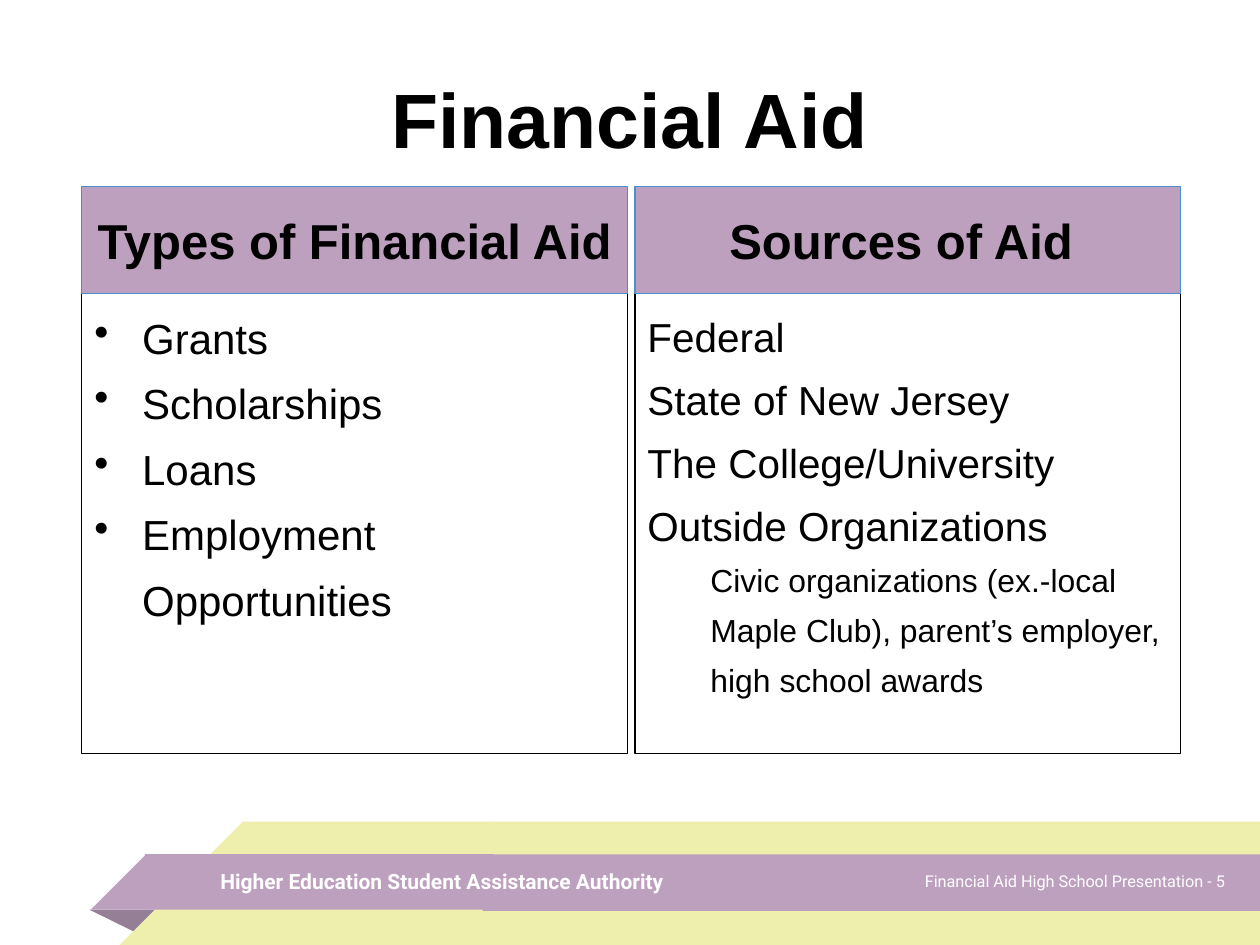
"""Build the Financial Aid slide: two headed panels above a ribbon footer."""
import pptx
import pptx.dml.color
import pptx.enum.shapes
import pptx.enum.text
import pptx.oxml.ns
import pptx.util
from lxml import etree

SHAPES = pptx.enum.shapes.MSO_SHAPE
ALIGN = pptx.enum.text.PP_ALIGN
ANCHOR = pptx.enum.text.MSO_ANCHOR
Inches = pptx.util.Inches

WIDTH, HEIGHT = 10, 7.5
BLACK, WHITE = "000000", "FFFFFF"
MAUVE, LIME, SHADE, BLUE = "BD9FBE", "EEEFAC", "957F97", "498FD2"

TITLE = "Financial Aid"
PANELS = [
    {
        "heading": "Types of Financial Aid",
        "size": 24,
        "bullet": True,
        "items": ["Grants", "Scholarships", "Loans", "Employment Opportunities"],
        "detail": [],
    },
    {
        "heading": "Sources of Aid ",
        "size": 23.1,
        "bullet": False,
        "items": ["Federal", "State of New Jersey", "The College/University",
                  "Outside Organizations"],
        "detail": ["Civic organizations (ex.-local Maple Club), parent’s employer, "
                   "high school awards"],
    },
]
DETAIL_SIZE = 18.2
LINE_SPACING = 1.3
PANEL_LEFT, PANEL_WIDTH, PANEL_GAP = 0.65, 4.33, 0.06
HEADING_TOP, HEADING_HEIGHT = 1.48, 0.85
BODY_TOP, BODY_HEIGHT = 2.31, 3.67

LIME_TOP, MAUVE_TOP, MAUVE_HEIGHT = 6.52, 6.78, 0.44
LIME_HEIGHT = HEIGHT - LIME_TOP
RIBBON = [
    (SHAPES.RECTANGLE, (3.88, LIME_TOP, WIDTH - 3.88, LIME_HEIGHT), LIME),
    (SHAPES.ISOSCELES_TRIANGLE, (0.71, 7.22, 0.57, 0.19), SHADE),
    (SHAPES.RECTANGLE, (1.92, LIME_TOP, 2, LIME_HEIGHT), LIME),
    (SHAPES.RIGHT_TRIANGLE, (0.95, LIME_TOP, 0.98, LIME_HEIGHT), LIME),
    (SHAPES.RECTANGLE, (1.15, MAUVE_TOP, 2.77, MAUVE_HEIGHT), MAUVE),
    (SHAPES.RIGHT_TRIANGLE, (0.72, MAUVE_TOP, MAUVE_HEIGHT, MAUVE_HEIGHT), MAUVE),
    (SHAPES.RECTANGLE, (3.83, MAUVE_TOP, WIDTH - 3.83, 0.45), MAUVE),
]
LABELS = [
    ((1.65, 6.79, 4.32, 0.4), "Higher Education Student Assistance Authority",
     12, True, WHITE, ALIGN.LEFT, "Roboto"),
    ((0.5, 0.31, 9, 1.25), TITLE, 44, True, BLACK, ALIGN.CENTER, "Arial"),
    ((6.82, 6.79, 3, 0.4), "Financial Aid High School Presentation - 5",
     9.3, False, WHITE, ALIGN.RIGHT, "Roboto"),
]


def color(value):
    return pptx.dml.color.RGBColor.from_string(value)


def add_shape(slide, kind, box, fill=None, line=None):
    shape = slide.shapes.add_shape(kind, *map(Inches, box))
    shape.shadow.inherit = False
    if fill:
        shape.fill.solid()
        shape.fill.fore_color.rgb = color(fill)
    else:
        shape.fill.background()
    if line:
        shape.line.color.rgb = color(line)
        shape.line.width = pptx.util.Pt(0.75)
    else:
        shape.line.fill.background()
    return shape


def add_run(paragraph, text, size, bold=False, ink=BLACK, align=ALIGN.LEFT, font="Arial"):
    paragraph.alignment = align
    run = paragraph.add_run()
    run.text = text
    run.font.name = font
    run.font.size = pptx.util.Pt(size)
    run.font.bold = bold
    run.font.color.rgb = color(ink)


def set_indent(paragraph, left, first=0, bullet=False):
    properties = paragraph._p.get_or_add_pPr()
    properties.set("marL", str(Inches(left)))
    properties.set("indent", str(Inches(first)))
    if bullet:
        etree.SubElement(properties, pptx.oxml.ns.qn("a:buChar")).set("char", "•")


def add_ribbon(slide):
    for kind, box, fill in RIBBON:
        shape = add_shape(slide, kind, box, fill)
        if kind == SHAPES.RIGHT_TRIANGLE:
            shape._element.spPr.get_or_add_xfrm().set("flipH", "1")
        elif kind == SHAPES.ISOSCELES_TRIANGLE:
            shape.rotation = 180
            shape.adjustments[0] = 0.324


def add_panel_body(slide, left, panel):
    shape = add_shape(slide, SHAPES.RECTANGLE,
                      (left, BODY_TOP, PANEL_WIDTH, BODY_HEIGHT), line=BLACK)
    frame = shape.text_frame
    frame.word_wrap = True
    frame.vertical_anchor = ANCHOR.TOP
    rows = [(text, panel["size"], False) for text in panel["items"]]
    rows += [(text, DETAIL_SIZE, True) for text in panel["detail"]]
    for index, (text, size, is_detail) in enumerate(rows):
        paragraph = frame.add_paragraph() if index else frame.paragraphs[0]
        paragraph.line_spacing = LINE_SPACING
        if is_detail:
            paragraph.level = 1
            set_indent(paragraph, 0.5)
        elif panel["bullet"]:
            set_indent(paragraph, 0.38, -0.38, True)
        add_run(paragraph, text, size)


def add_panel_heading(slide, left, panel):
    shape = add_shape(slide, SHAPES.RECTANGLE,
                      (left, HEADING_TOP, PANEL_WIDTH, HEADING_HEIGHT), MAUVE, BLUE)
    frame = shape.text_frame
    frame.word_wrap = True
    frame.vertical_anchor = ANCHOR.MIDDLE
    add_run(frame.paragraphs[0], panel["heading"], 28, True, align=ALIGN.CENTER)


def add_label(slide, box, *style):
    frame = slide.shapes.add_textbox(*map(Inches, box)).text_frame
    frame.word_wrap = True
    frame.vertical_anchor = ANCHOR.MIDDLE
    add_run(frame.paragraphs[0], *style)


def main():
    presentation = pptx.Presentation()
    presentation.slide_width = Inches(WIDTH)
    presentation.slide_height = Inches(HEIGHT)
    slide = presentation.slides.add_slide(presentation.slide_layouts[6])
    add_ribbon(slide)
    for add_part in (add_panel_body, add_panel_heading):
        for column, panel in enumerate(PANELS):
            add_part(slide, PANEL_LEFT + column * (PANEL_WIDTH + PANEL_GAP), panel)
    for label in LABELS:
        add_label(slide, *label)
    presentation.save("out.pptx")


if __name__ == "__main__":
    main()
